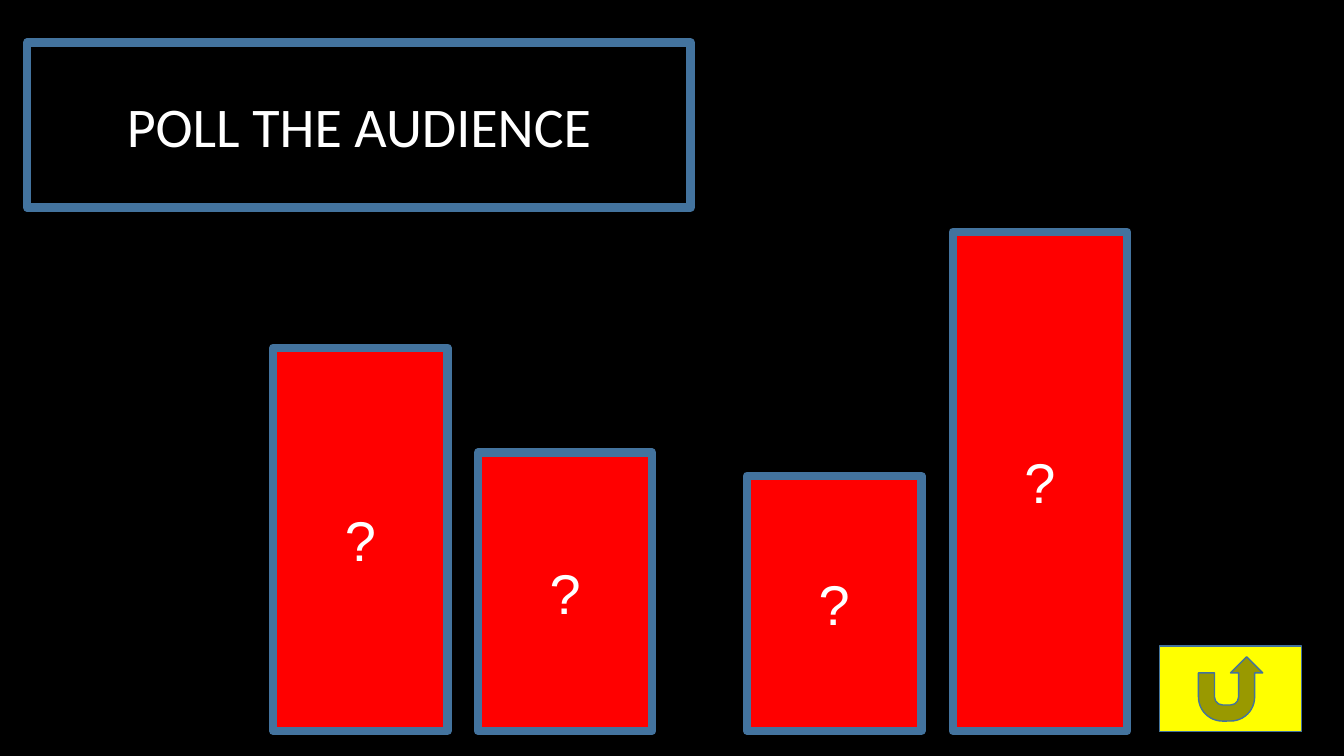
from pptx import Presentation
from pptx.dml.color import RGBColor
from pptx.enum.shapes import MSO_SHAPE
from pptx.enum.text import MSO_ANCHOR, MSO_AUTO_SIZE, PP_ALIGN
from pptx.util import Inches, Pt

COLORS = {
    "black": "000000",
    "white": "FFFFFF",
    "red": "FF0000",
    "yellow": "FFFF00",
    "border": "43739E",
}
BAR_WIDTH = 1.73
BAR_BOTTOM = 7.25
BARS = [(2.71, 3.8), (4.74, 2.76), (7.41, 2.53), (9.45, 4.95)]


class PollSlide:
    text_size = Pt(40)
    thick_border = Pt(6)
    thin_border = Pt(1)

    def __init__(self, deck):
        self.page = deck.slides.add_slide(deck.slide_layouts[5])
        background = self.page.background.fill
        background.solid()
        background.fore_color.rgb = self.color("black")

    def color(self, name):
        return RGBColor.from_string(COLORS[name])

    def paint(self, shape, fill, border):
        shape.fill.solid()
        shape.fill.fore_color.rgb = self.color(fill)
        shape.line.color.rgb = self.color("border")
        shape.line.width = border

    def add_label(self, shape, text, font):
        box = shape.text_frame
        box.word_wrap = True
        box.auto_size = MSO_AUTO_SIZE.NONE
        box.vertical_anchor = MSO_ANCHOR.MIDDLE
        para = box.paragraphs[0]
        para.alignment = PP_ALIGN.CENTER
        span = para.add_run()
        span.text = text
        span.font.name = font
        span.font.size = self.text_size
        span.font.color.rgb = self.color("white")

    def add_title(self, text, left, top, width, height):
        title = self.page.shapes.title
        title.left, title.top = Inches(left), Inches(top)
        title.width, title.height = Inches(width), Inches(height)
        self.paint(title, "black", self.thick_border)
        self.add_label(title, text, "Calibri")

    def add_block(self, kind, left, top, width, height, fill, border):
        block = self.page.shapes.add_shape(
            kind, Inches(left), Inches(top), Inches(width), Inches(height)
        )
        block.shadow.inherit = False
        self.paint(block, fill, border)
        return block

    def add_bar(self, left, height):
        bar = self.add_block(
            MSO_SHAPE.RECTANGLE, left, BAR_BOTTOM - height,
            BAR_WIDTH, height, "red", self.thick_border,
        )
        self.add_label(bar, "?", "Arial")

    def add_return_button(self, left, top, width, height):
        self.add_block(
            MSO_SHAPE.ACTION_BUTTON_RETURN, left, top,
            width, height, "yellow", self.thin_border,
        )


def main():
    deck = Presentation()
    deck.slide_width, deck.slide_height = Inches(13.33), Inches(7.5)
    poll = PollSlide(deck)
    poll.add_title("POLL THE AUDIENCE", 0.27, 0.42, 6.58, 1.64)
    for left, height in BARS:
        poll.add_bar(left, height)
    poll.add_return_button(11.5, 6.41, 1.41, 0.85)
    deck.save("out.pptx")


if __name__ == "__main__":
    main()
